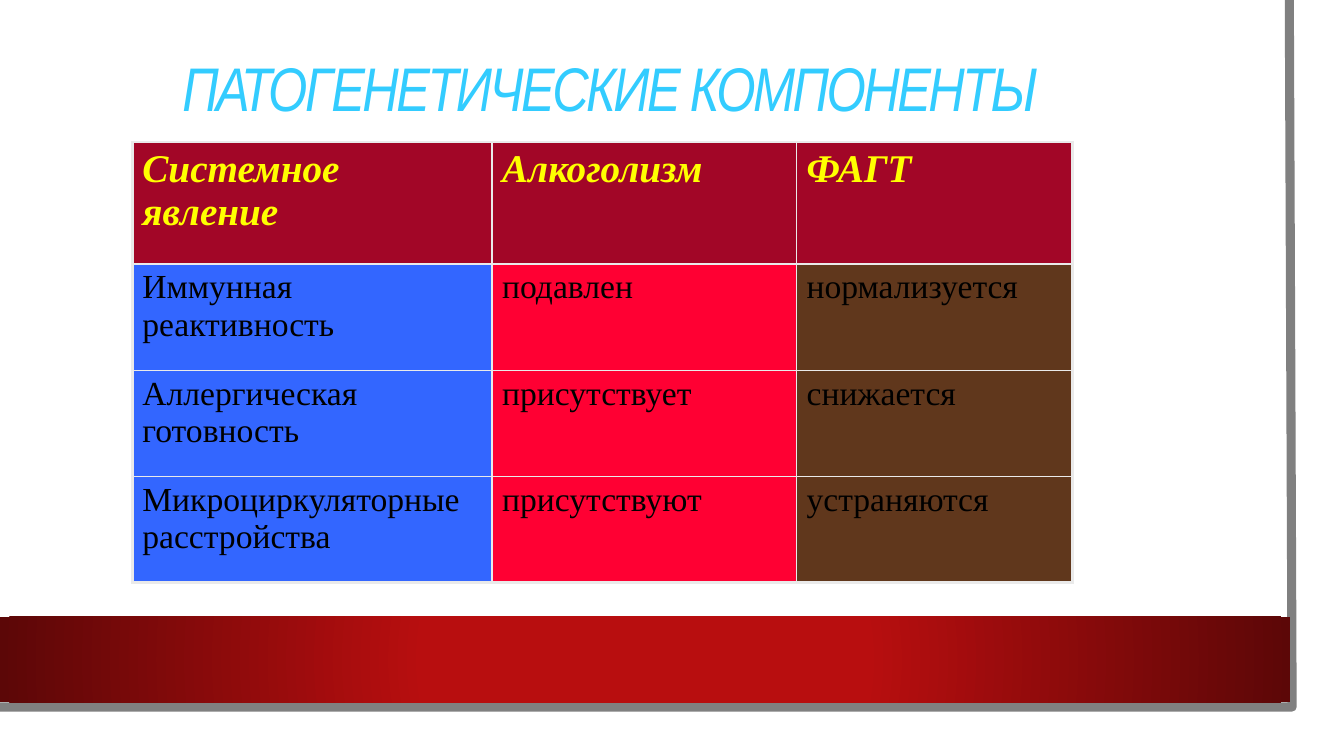
import pptx
import pptx.dml.color
import pptx.enum.shapes
import pptx.enum.text
import pptx.oxml
import pptx.oxml.ns
import pptx.util

Pt = pptx.util.Pt
COLORS = {
    "white": "FFFFFF", "frame": "808080", "band": "B80E0F", "band_edge": "5C0707",
    "title": "33CCFF", "header": "A20627", "header_text": "FFFF00", "body_text": "000000",
    "phenomenon": "3366FF", "alcoholism": "FF0033", "therapy": "60371C", "border": "EAEAEA",
}
ROWS = [
    ["Системное явление", "Алкоголизм", "ФАГТ"],
    ["Иммунная реактивность", "подавлен", "нормализуется"],
    ["Аллергическая готовность", "присутствует", "снижается"],
    ["Микроциркуляторные расстройства", "присутствуют", "устраняются"],
]
COLUMN_FILLS = ["phenomenon", "alcoholism", "therapy"]


class SlideBuilder:
    title_font = "Arial Narrow"
    table_font = "Times New Roman"

    def __init__(self, deck):
        self.slide = deck.slides.add_slide(deck.slide_layouts[6])
        self.shapes = self.slide.shapes

    def color(self, name):
        return pptx.dml.color.RGBColor.from_string(COLORS[name])

    def paint(self, target, name):
        target.fill.solid()
        target.fill.fore_color.rgb = self.color(name)

    def xml(self, markup):
        return pptx.oxml.parse_xml(markup.replace(">", " " + pptx.oxml.ns.nsdecls("a") + ">", 1))

    def rectangle(self, left, top, width, height, fill):
        box = self.shapes.add_shape(
            pptx.enum.shapes.MSO_SHAPE.RECTANGLE, Pt(left), Pt(top), Pt(width), Pt(height))
        box.shadow.inherit = False
        box.line.fill.background()
        self.paint(box, fill)
        return box

    def radial_band(self, left, top, width, height, center, edge):
        band = self.rectangle(left, top, width, height, center)
        stops = "".join(
            f'<a:gs pos="{position}"><a:srgbClr val="{COLORS[name]}"/></a:gs>'
            for position, name in [(34000, center), (100000, edge)])
        gradient = self.xml(
            f'<a:gradFill><a:gsLst>{stops}</a:gsLst><a:path path="circle">'
            '<a:fillToRect l="50000" t="50000" r="50000" b="50000"/></a:path></a:gradFill>')
        solid = band._element.spPr.find(pptx.oxml.ns.qn("a:solidFill"))
        solid.getparent().replace(solid, gradient)

    def outline(self, points, color, width):
        builder = self.shapes.build_freeform(*points[0], scale=Pt(1))
        builder.add_line_segments(points[1:], close=False)
        line = builder.convert_to_shape()
        line.shadow.inherit = False
        line.fill.background()
        line.line.color.rgb = self.color(color)
        line.line.width = Pt(width)

    def run(self, para, text, font, size, color, bold=False, italic=False):
        span = para.add_run()
        span.text = text
        span.font.name = font
        span.font.size = Pt(size)
        span.font.bold = bold
        span.font.italic = italic
        span.font.color.rgb = self.color(color)
        return span

    def title(self, left, top, width, height, text):
        box = self.shapes.add_textbox(Pt(left), Pt(top), Pt(width), Pt(height))
        frame = box.text_frame
        frame.word_wrap = True
        frame.vertical_anchor = pptx.enum.text.MSO_ANCHOR.MIDDLE
        para = frame.paragraphs[0]
        para.line_spacing = 0.9
        span = self.run(para, text, self.title_font, 44, "title", italic=True)
        span.font._element.set("spc", "-180")

    def border(self, cell, side, width):
        cell._tc.get_or_add_tcPr().append(self.xml(
            f'<a:{side} w="{Pt(width)}"><a:solidFill>'
            f'<a:srgbClr val="{COLORS["border"]}"/></a:solidFill></a:{side}>'))

    def table(self, left, top, widths, heights, rows, fills):
        table = self.shapes.add_table(
            len(rows), len(widths), Pt(left), Pt(top), Pt(sum(widths)), Pt(sum(heights))).table
        for column, width in zip(table.columns, widths):
            column.width = Pt(width)
        last_row, last_column = len(rows) - 1, len(widths) - 1
        for r, texts in enumerate(rows):
            table.rows[r].height = Pt(heights[r])
            for c, text in enumerate(texts):
                cell = table.cell(r, c)
                header = r == 0
                outer = {"lnL": c == 0, "lnR": c == last_column,
                         "lnT": header, "lnB": r == last_row}
                for side, is_outer in outer.items():
                    self.border(cell, side, 2.25 if is_outer else 1)
                self.paint(cell, "header" if header else fills[c])
                self.run(cell.text_frame.paragraphs[0], text, self.table_font,
                         28 if header else 24, "header_text" if header else "body_text",
                         bold=header, italic=header)


def main():
    deck = pptx.Presentation()
    deck.slide_width, deck.slide_height = Pt(960), Pt(540)
    page = SlideBuilder(deck)
    page.rectangle(0, 0, 943.2, 523.4, "white")
    page.outline([(920.9, 0), (923, 505.4), (-2.2, 504.7)], "frame", 6.5)
    page.radial_band(0, 440.6, 921.6, 61.2, "band", "band_edge")
    page.title(123.1, 20.2, 749.5, 90.7, "ПАТОГЕНЕТИЧЕСКИЕ КОМПОНЕНТЫ")
    page.table(94.5, 101.5, [257, 217.5, 197.3], [87.1] + [75.8] * 3, ROWS, COLUMN_FILLS)
    deck.save("out.pptx")


if __name__ == "__main__":
    main()
